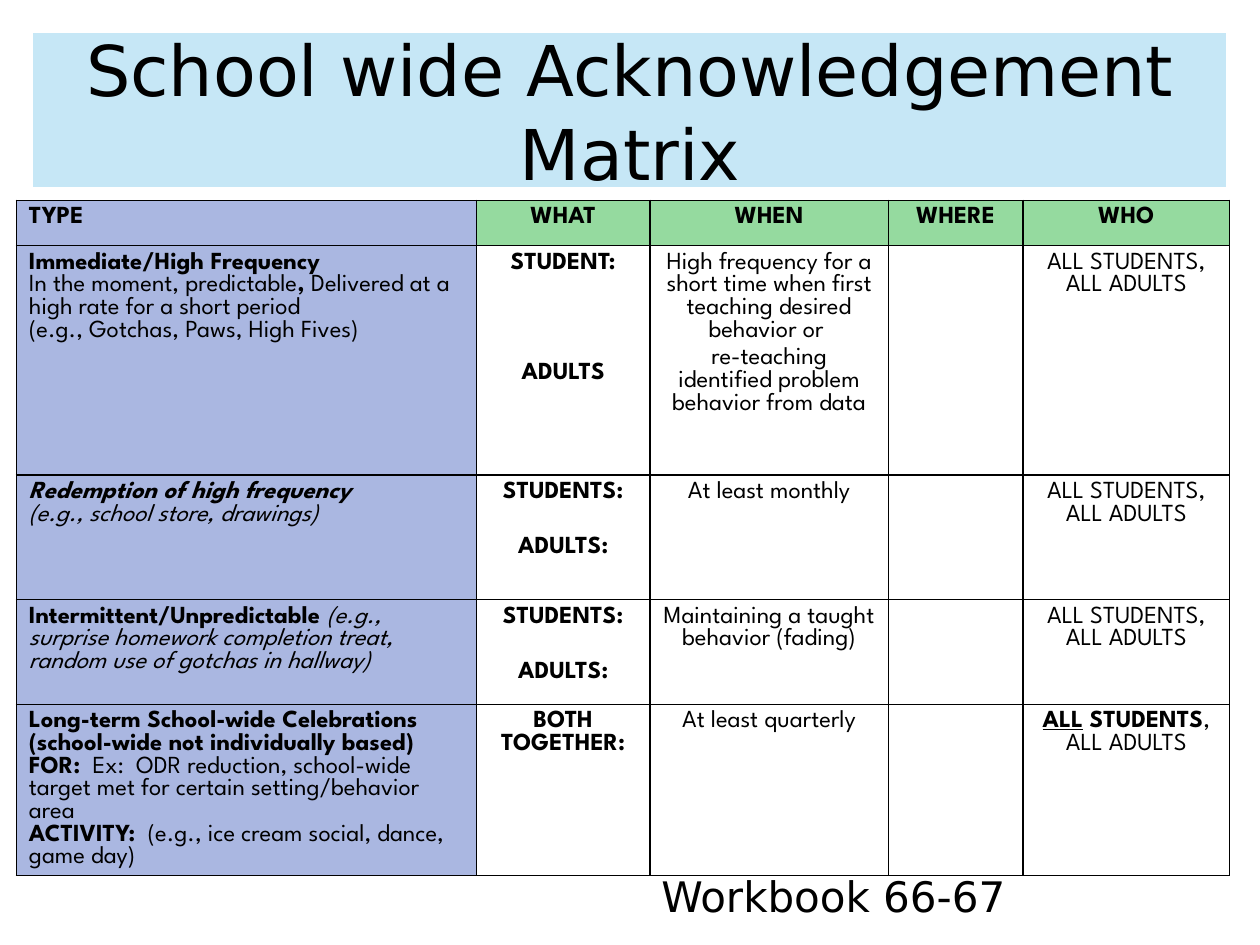
from lxml.etree import SubElement as Sub
from pptx import Presentation
from pptx.dml.color import RGBColor as RGB
from pptx.enum.text import MSO_ANCHOR as Anchor, MSO_AUTO_SIZE as Auto, PP_ALIGN as Align
from pptx.oxml.ns import qn
from pptx.util import Inches, Pt

"""Build the school-wide acknowledgement matrix slide."""

HUES = {"ink": "000000", "paper": "FFFFFF", "sky": "A9DCF2", "blue": "AAB7E1", "green": "95DA9F"}
STYLES = {"b": "bold", "i": "italic", "u": "underline"}


def write(para, text, size, face, marks=""):
    run = para.add_run()
    run.text = text
    look = {"size": Pt(size), "name": face}
    look.update({name: mark in marks for mark, name in STYLES.items()})
    for name, value in look.items():
        setattr(run.font, name, value)
    run.font.color.rgb = RGB.from_string(HUES["ink"])


def edge(cell):
    props = cell._tc.get_or_add_tcPr()
    for spot, side in enumerate(("a:lnL", "a:lnR", "a:lnT", "a:lnB")):
        line = props.makeelement(qn(side), {"w": str(Pt(1))})
        Sub(Sub(line, qn("a:solidFill")), qn("a:srgbClr"), val=HUES["ink"])
        props.insert(spot, line)


deck = Presentation()
deck.slide_width, deck.slide_height = Inches(10), Inches(7.5)
slide = deck.slides.add_slide(deck.slide_layouts[5])

title = slide.shapes.title
note = slide.shapes.add_textbox(Inches(5.15), Inches(6.71), Inches(6.77), Inches(0.79))
place = {"left": 0.25, "top": 0.25, "width": 9.5, "height": 1.25}
for name, value in place.items():
    setattr(title, name, Inches(value))
title.fill.solid()
title.fill.fore_color.rgb = RGB.from_string(HUES["sky"])
Sub(title.fill._xPr.find(qn("a:solidFill"))[0], qn("a:alpha"), val="66000")
title.line.color.rgb = RGB.from_string(HUES["paper"])
title.line.width = Pt(2.25)

frame_look = {"word_wrap": True, "auto_size": Auto.NONE, "vertical_anchor": Anchor.MIDDLE}
frame_look.update({f"margin_{side}": Inches(0.1) for side in ("left", "right", "top", "bottom")})
heads = [
    (title, "School wide Acknowledgement Matrix", 40, Align.CENTER),
    (note, "Workbook 66-67", 24, Align.LEFT),
]
for shape, text, size, align in heads:
    frame = shape.text_frame
    for name, value in frame_look.items():
        setattr(frame, name, value)
    frame.paragraphs[0].alignment = align
    write(frame.paragraphs[0], text, size, "DejaVu Sans")

everyone = (0, [("ALL STUDENTS, ALL ADULTS", "")])
pair = [(0, [("STUDENTS:", "b")]), (18.5, [("ADULTS:", "b")])]
names = ["TYPE", "WHAT", "WHEN", "WHERE", "WHO"]
rows = [
    [[(0, [(name, "b")])] for name in names],
    [
        [
            (0, [("Immediate/High Frequency", "b")]),
            (0, [("In the moment, predictable", ""), (", ", "b"),
                 ("Delivered at a high rate for a short period", "")]),
            (0, [("(e.g., Gotchas, Paws, High Fives)", "")]),
        ],
        [(0, [("STUDENT:", "b")]), (50, [("ADULTS", "b")])],
        [
            (0, [("High frequency for a short time when first teaching desired behavior or ", "")]),
            (2.8, [("re-teaching identified problem behavior from data", "")]),
        ],
        [],
        [everyone],
    ],
    [
        [(0, [("Redemption of high frequency", "bi")]), (0, [("(e.g., school store, drawings)", "i")])],
        pair,
        [(0, [("At least monthly", "")])],
        [],
        [everyone],
    ],
    [
        [(0, [("Intermittent/Unpredictable ", "b"),
              ("(e.g., surprise homework completion treat, random use of gotchas in hallway)", "i")])],
        pair,
        [(0, [("Maintaining a taught behavior (fading)", "")])],
        [],
        [everyone],
    ],
    [
        [
            (0, [("Long-term School-wide Celebrations (school-wide not individually based)", "b")]),
            (0, [("FOR:", "b"),
                 ("  Ex:  ODR reduction, school-wide target met for certain setting/behavior area", "")]),
            (0, [("ACTIVITY:", "b"), ("  (e.g., ice cream social, dance, game day)", "")]),
        ],
        [(0, [("BOTH TOGETHER:", "b")])],
        [(0, [("At least quarterly", "")])],
        [],
        [(0, [("ALL", "bu"), (" STUDENTS", "b"), (", ALL ADULTS", "")])],
    ],
]
widths = [3.65, 1.38, 1.89, 1.07, 1.64]
heights = [0.36, 1.82, 0.99, 0.83, 1.15]

grid = slide.shapes.add_table(
    len(rows), len(names), Inches(0.13), Inches(1.59), Inches(sum(widths)), Inches(sum(heights))
).table
grid.first_row = grid.horz_banding = False
for col, width in zip(grid.columns, widths):
    col.width = Inches(width)
for row, height in zip(grid.rows, heights):
    row.height = Inches(height)

for r, row in enumerate(rows):
    for c, paras in enumerate(row):
        cell = grid.cell(r, c)
        cell.fill.solid()
        hue = "blue" if c == 0 else "green" if r == 0 else "paper"
        cell.fill.fore_color.rgb = RGB.from_string(HUES[hue])
        edge(cell)
        for n, (gap, runs) in enumerate(paras):
            frame = cell.text_frame
            para = frame.add_paragraph() if n else frame.paragraphs[0]
            para.alignment = Align.CENTER if c else Align.LEFT
            if gap:
                para.space_before = Pt(gap)
            for text, marks in runs:
                write(para, text, 14, "League Spartan", marks)

deck.save("out.pptx")
